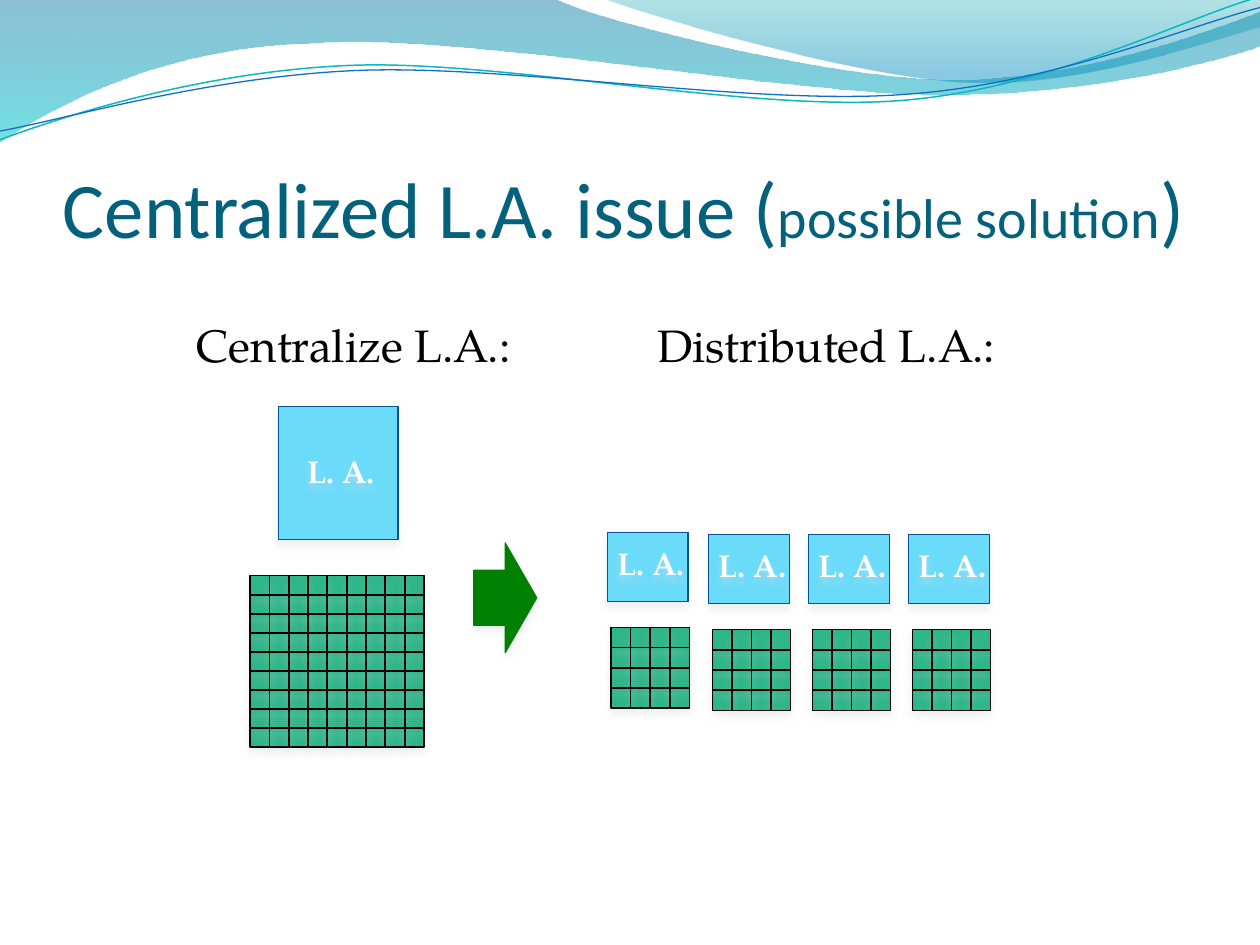
from lxml import etree
from pptx import Presentation
from pptx.dml.color import RGBColor
from pptx.enum.shapes import MSO_CONNECTOR, MSO_SHAPE
from pptx.enum.text import MSO_ANCHOR, MSO_AUTO_SIZE
from pptx.oxml.ns import qn
from pptx.util import Inches, Pt

STRAIGHT = MSO_CONNECTOR.STRAIGHT
RECTANGLE, RIGHT_ARROW = MSO_SHAPE.RECTANGLE, MSO_SHAPE.RIGHT_ARROW
BOTTOM, TOP = MSO_ANCHOR.BOTTOM, MSO_ANCHOR.TOP
FIT_SHAPE = MSO_AUTO_SIZE.SHAPE_TO_FIT_TEXT

WIDTH, HEIGHT = Inches(10), Inches(7.5)
COLUMN, ROW = WIDTH / 100, HEIGHT / 75

TITLE_FONT, BODY_FONT = "Calibri", "TeX Gyre Pagella"
BLACK, WHITE = RGBColor(0, 0, 0), RGBColor(255, 255, 255)
TITLE_BLUE = RGBColor(0x04, 0x61, 0x7B)
CELL_GREEN, ARROW_GREEN = RGBColor(0x2E, 0xB5, 0x8A), RGBColor(0, 0x80, 0)
AGENT_BLUE, AGENT_EDGE = RGBColor(0x6B, 0xDB, 0xFA), RGBColor(0x09, 0x52, 0x95)
SHADOW = RGBColor(0xDB, 0xE0, 0xE4)
TEAL_LINE, BLUE_LINE = RGBColor(0x0A, 0xB8, 0xBF), RGBColor(0x0F, 0x6F, 0xC6)
# Gradient stops: position, colour, opacity in percent
WIDE_STOPS = [(0, RGBColor(0, 0x74, 0xA1), 45), (1, RGBColor(0, 0xC6, 0xCF), 55)]
RIGHT_STOPS = [(0, RGBColor(0, 0xA1, 0xA9), 30), (0.8, RGBColor(0, 0x8B, 0xBF), 45)]

# Outlines in columns and rows: two numbers for a corner, six for a curve
WIDE_WAVE = [(0, 0), (44, -0.1), (47.6, 1.7, 66.4, 6.3, 75.8, 6.3),
             (85.3, 6.3, 95.8, 2.6, 100, 0.9), (100.1, 3.6),
             (98.3, 4.4, 87, 7.6, 74.6, 7.5), (62.2, 7.5, 38.2, 2.8, 25.7, 3.4),
             (12.9, 3.6, 4.6, 8.3, -0.1, 11.3)]
RIGHT_WAVE = [(47.9, -0.1), (50.9, 1.1, 68.2, 6.2, 76.9, 6.5),
              (85.6, 6.9, 96.1, 3.2, 100, 2.1), (100, 0)]
TEAL_WAVE = [(0, 11.1), (4.8, 9.3, 15.8, 5.7, 27.7, 5.2),
             (39.5, 4.7, 59.3, 8.9, 71.3, 8), (83.3, 7.1, 93.8, 1.5, 99.8, -0.2)]
BLUE_WAVE = [(0, 10.4), (4.7, 9.6, 16.4, 6.1, 28.3, 5.6),
             (40.3, 5.1, 59.7, 8.4, 71.7, 7.5), (83.6, 6.7, 94.1, 2.1, 100, 0.6)]


def place(left, top, *size):
    """Turn columns and rows into slide lengths."""
    values = (left, top, *size)
    return [int(n * (ROW if i % 2 else COLUMN)) for i, n in enumerate(values)]


def add_shadow(element, blur=4.5, distance=3):
    effects = etree.SubElement(element.spPr, qn("a:effectLst"))
    outer = etree.SubElement(effects, qn("a:outerShdw"), blurRad=str(Pt(blur)),
                             dist=str(Pt(distance)), dir="5400000", rotWithShape="0")
    color = etree.SubElement(outer, qn("a:srgbClr"), val=str(SHADOW))
    etree.SubElement(color, qn("a:alpha"), val="48000")


def add_outline(page, outline, closed):
    """Draw the outline's points, then join each three of a curve into a Bezier."""
    points = [place(*part[i:i + 2]) for part in outline for i in range(0, len(part), 2)]
    builder = page.shapes.build_freeform(*points[0])
    builder.add_line_segments(points[1:], close=closed)
    wave = builder.convert_to_shape()
    wave.shadow.inherit = False
    segments = iter(list(wave._element.iter(qn("a:lnTo"))))
    for part in outline[1:]:
        first = next(segments)
        if len(part) == 6:
            curve = etree.Element(qn("a:cubicBezTo"))
            first.addprevious(curve)
            for segment in (first, next(segments), next(segments)):
                curve.append(segment[0])
                segment.getparent().remove(segment)
    return wave


def add_wave_area(page, outline, stops):
    wave = add_outline(page, outline, True)
    wave.fill.gradient()
    wave.fill.gradient_angle = 270
    for stop, (position, color, _) in zip(wave.fill.gradient_stops, stops):
        stop.position = position
        stop.color.rgb = color
    for color, (_, _, opacity) in zip(wave._element.spPr.iter(qn("a:srgbClr")), stops):
        etree.SubElement(color, qn("a:alpha"), val=str(opacity * 1000))
    wave.line.fill.background()


def add_wave_line(page, outline, color, width):
    wave = add_outline(page, outline, False)
    wave.fill.background()
    wave.line.color.rgb = color
    wave.line.width = Pt(width)


def add_block(shapes, kind, area, fill, edge):
    block = shapes.add_shape(kind, *place(*area))
    block.fill.solid()
    block.fill.fore_color.rgb = fill
    block.line.color.rgb = edge
    block.line.width = Pt(0.75)
    add_shadow(block._element)


def add_text(shapes, area, spans, font, color, anchor=TOP, bold=False):
    """Add one paragraph made of (text, size) spans."""
    box = shapes.add_textbox(*place(*area))
    frame = box.text_frame
    frame.word_wrap = True
    frame.vertical_anchor = anchor
    para = frame.paragraphs[0]
    for text, size in spans:
        span = para.add_run()
        span.text = text
        span.font.name = font
        span.font.size = Pt(size)
        span.font.bold = bold
        span.font.color.rgb = color
    return box


def add_headings(page):
    """Add both column headings on one line, the second at a tab stop."""
    box = add_text(page.shapes, (9.2, 24.65, 74.7, 8.6),
                   [("Centralize L.A.:\tDistributed L.A.:", 26)], BODY_FONT, BLACK)
    frame = box.text_frame
    frame.margin_left = Inches(0.64)
    tabs = etree.SubElement(frame.paragraphs[0]._p.get_or_add_pPr(), qn("a:tabLst"))
    etree.SubElement(tabs, qn("a:tab"), pos=str(Inches(3.66)), algn="l")


def add_cells(shapes, left, top, width, height, count):
    """Add a green square divided into count by count cells."""
    add_block(shapes, RECTANGLE, (left, top, width, height), CELL_GREEN, BLACK)
    right, bottom = left + width, top + height
    across = [left + width * i / count for i in range(1, count)]
    down = [top + height * i / count for i in range(count - 1, 0, -1)]
    ends = [(x, top, x, bottom) for x in across] + [(right, y, left, y) for y in down]
    for points in ends:
        divider = shapes.add_connector(STRAIGHT, *place(*points))
        divider.line.color.rgb = BLACK
        divider.line.width = Pt(1)
        add_shadow(divider._element)


def add_agent(shapes, area, label_left, label_top):
    add_block(shapes, RECTANGLE, area, AGENT_BLUE, AGENT_EDGE)
    label = add_text(shapes, (label_left, label_top, 7.5, 4), [("L. A.", 18)],
                     BODY_FONT, WHITE, bold=True)
    label.text_frame.word_wrap = False
    label.text_frame.auto_size = FIT_SHAPE
    add_shadow(label._element)


def add_distributed_unit(page, left, top):
    shapes = page.shapes.add_group_shape().shapes
    add_cells(shapes, left, top, 6.2, 6.4, 4)
    add_agent(shapes, (left - 0.3, top - 7.55, 6.4, 5.5), left - 0.5, top - 7.1)


def main():
    deck = Presentation()
    deck.slide_width, deck.slide_height = WIDTH, HEIGHT
    page = deck.slides.add_slide(deck.slide_layouts[6])

    add_wave_area(page, WIDE_WAVE, WIDE_STOPS)
    add_wave_area(page, RIGHT_WAVE, RIGHT_STOPS)
    add_wave_line(page, TEAL_WAVE, TEAL_LINE, 0.85)
    add_wave_line(page, BLUE_WAVE, BLUE_LINE, 0.75)

    title = add_text(page.shapes, (5, 7.7, 90, 12.5),
                     [("Centralized L.A. issue (", 45), ("possible solution", 32), (")", 45)],
                     TITLE_FONT, TITLE_BLUE, BOTTOM)
    frame = title.text_frame
    frame.margin_left = frame.margin_right = frame.margin_bottom = 0
    add_headings(page)

    add_cells(page.shapes.add_group_shape().shapes, 19.85, 45.7, 13.8, 13.6, 9)
    add_block(page.shapes, RIGHT_ARROW, (37.6, 43.1, 5, 8.7), ARROW_GREEN, ARROW_GREEN)
    add_agent(page.shapes, (22.1, 32.25, 9.5, 10.6), 23.4, 35.4)
    add_distributed_unit(page, 48.5, 49.8)
    for index in range(3):
        add_distributed_unit(page, 56.55 + 7.93 * index, 49.97)

    deck.save("out.pptx")


if __name__ == "__main__":
    main()
